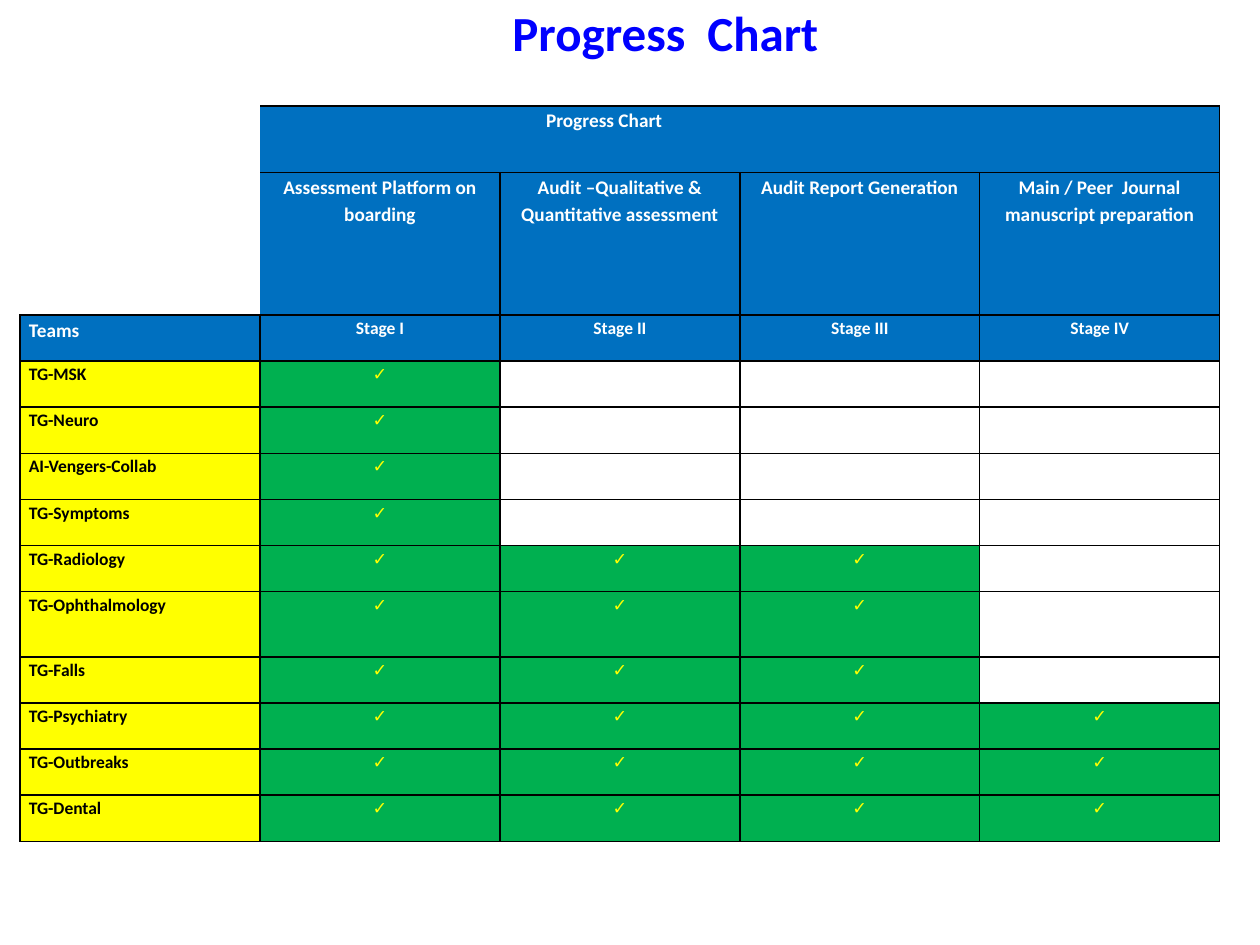
from dataclasses import dataclass

import pptx
import pptx.dml.color
import pptx.enum.text
import pptx.oxml
import pptx.oxml.ns
import pptx.util
from pptx.dml.color import RGBColor
from pptx.enum.text import MSO_ANCHOR, MSO_AUTO_SIZE, PP_ALIGN
from pptx.util import Inches

BLUE = RGBColor(0x00, 0x70, 0xC0)
TITLE_BLUE = RGBColor(0x00, 0x00, 0xFF)
GREEN = RGBColor(0x00, 0xB0, 0x50)
YELLOW = RGBColor(0xFF, 0xFF, 0x00)
WHITE = RGBColor(0xFF, 0xFF, 0xFF)
BLACK = RGBColor(0x00, 0x00, 0x00)
FONT = "Calibri"
ALL_SIDES = "LRTB"

STAGES = [
    ("Stage I", "Assessment Platform on boarding"),
    ("Stage II", "Audit –Qualitative & Quantitative assessment"),
    ("Stage III", "Audit Report Generation"),
    ("Stage IV", "Main / Peer  Journal manuscript preparation"),
]


@dataclass
class Team:
    name: str
    stages_done: int


@dataclass
class CellStyle:
    fill: RGBColor | None
    color: RGBColor = WHITE
    size: float = 10
    align: PP_ALIGN = PP_ALIGN.CENTER
    sides: str = ALL_SIDES
    bold: bool = True


TEAMS = [
    Team("TG-MSK", 1),
    Team("TG-Neuro", 1),
    Team("AI-Vengers-Collab", 1),
    Team("TG-Symptoms", 1),
    Team("TG-Radiology", 3),
    Team("TG-Ophthalmology", 3),
    Team("TG-Falls", 3),
    Team("TG-Psychiatry", 4),
    Team("TG-Outbreaks", 4),
    Team("TG-Dental", 4),
]

BANNER = CellStyle(BLUE, size=11, align=PP_ALIGN.LEFT, sides="RTB")
STAGE_HEADING = CellStyle(BLUE, size=11)
FIRST_STAGE_HEADING = CellStyle(BLUE, size=11, sides="RTB")
TEAMS_HEADING = CellStyle(BLUE, size=11, align=PP_ALIGN.LEFT)
STAGE_NUMBER = CellStyle(BLUE)
TEAM_NAME = CellStyle(YELLOW, BLACK, align=PP_ALIGN.LEFT)
DONE = CellStyle(GREEN, YELLOW)
PENDING = CellStyle(None)
CORNER = CellStyle(WHITE, sides="")
CORNER_BOTTOM = CellStyle(WHITE, sides="B")


def set_borders(cell, sides: str) -> None:
    """Draw 1 pt black lines on the given sides and none on the others."""
    properties = cell._tc.get_or_add_tcPr()
    for side in ALL_SIDES:
        paint = (f'<a:solidFill><a:srgbClr val="{BLACK}"/></a:solidFill>'
                 if side in sides else "<a:noFill/>")
        properties.append(pptx.oxml.parse_xml(
            f'<a:ln{side} {pptx.oxml.ns.nsdecls("a")} w="12700">{paint}</a:ln{side}>'))


def fill_cell(cell, text: str, style: CellStyle) -> None:
    set_borders(cell, style.sides)
    if style.fill is None:
        cell.fill.background()
    else:
        cell.fill.solid()
        cell.fill.fore_color.rgb = style.fill
    cell.margin_left = cell.margin_right = Inches(0.07)
    cell.margin_top = cell.margin_bottom = 0
    if not text:
        return
    cell.text_frame.text = text
    paragraph = cell.text_frame.paragraphs[0]
    paragraph.alignment = style.align
    paragraph.line_spacing = 1.15
    format_runs(paragraph, style.size, style.color, style.bold)


def format_runs(paragraph, size: float, color: RGBColor, bold: bool) -> None:
    for run in paragraph.runs:
        run.font.name = FONT
        run.font.size = pptx.util.Pt(size)
        run.font.bold = bold
        run.font.color.rgb = color


def add_tab_stop(paragraph, position: int) -> None:
    paragraph._p.get_or_add_pPr().append(pptx.oxml.parse_xml(
        f'<a:tabLst {pptx.oxml.ns.nsdecls("a")}>'
        f'<a:tab pos="{position}" algn="l"/></a:tabLst>'))


def add_title(slide) -> None:
    title = slide.shapes.title
    title.left, title.top = 0, 0
    title.width, title.height = Inches(9.77), Inches(0.56)
    frame = title.text_frame
    frame.text = "Progress  Chart"
    frame.auto_size = MSO_AUTO_SIZE.NONE
    frame.vertical_anchor = MSO_ANCHOR.MIDDLE
    frame.margin_left = Inches(0.89)
    paragraph = frame.paragraphs[0]
    paragraph.alignment = PP_ALIGN.CENTER
    paragraph.line_spacing = 0.9
    format_runs(paragraph, 28, TITLE_BLUE, True)


def add_progress_table(slide) -> None:
    header_rows = 3
    row_count, column_count = header_rows + len(TEAMS), 1 + len(STAGES)
    width, height = Inches(9.52), Inches(5.84)
    table = slide.shapes.add_table(
        row_count, column_count, Inches(0.16), Inches(0.84), width, height).table
    table.first_row = table.horz_banding = False

    for column in table.columns:
        column.width = width // column_count
    tall_rows = {0: Inches(0.53), 1: Inches(1.13), 8: Inches(0.52)}
    common_height = (height - sum(tall_rows.values())) // (row_count - len(tall_rows))
    for index, row in enumerate(table.rows):
        row.height = tall_rows.get(index, common_height)

    fill_cell(table.cell(0, 0), "", CORNER)
    fill_cell(table.cell(1, 0), "", CORNER_BOTTOM)
    fill_cell(table.cell(2, 0), "Teams", TEAMS_HEADING)
    for column, (number, heading) in enumerate(STAGES, start=1):
        first = column == 1
        fill_cell(table.cell(0, column), "\tProgress Chart" if first else "", BANNER)
        fill_cell(table.cell(1, column), heading,
                  FIRST_STAGE_HEADING if first else STAGE_HEADING)
        fill_cell(table.cell(2, column), number, STAGE_NUMBER)
    banner = table.cell(0, 1)
    banner.merge(table.cell(0, len(STAGES)))
    add_tab_stop(banner.text_frame.paragraphs[0], Inches(2.2))

    for row, team in enumerate(TEAMS, start=header_rows):
        fill_cell(table.cell(row, 0), team.name, TEAM_NAME)
        for column in range(1, column_count):
            done = column <= team.stages_done
            fill_cell(table.cell(row, column), "✓" if done else "",
                      DONE if done else PENDING)


def main() -> None:
    presentation = pptx.Presentation()
    presentation.slide_width, presentation.slide_height = Inches(10), Inches(7.5)
    slide = presentation.slides.add_slide(presentation.slide_layouts[5])
    add_progress_table(slide)
    add_title(slide)
    presentation.save("out.pptx")


if __name__ == "__main__":
    main()
